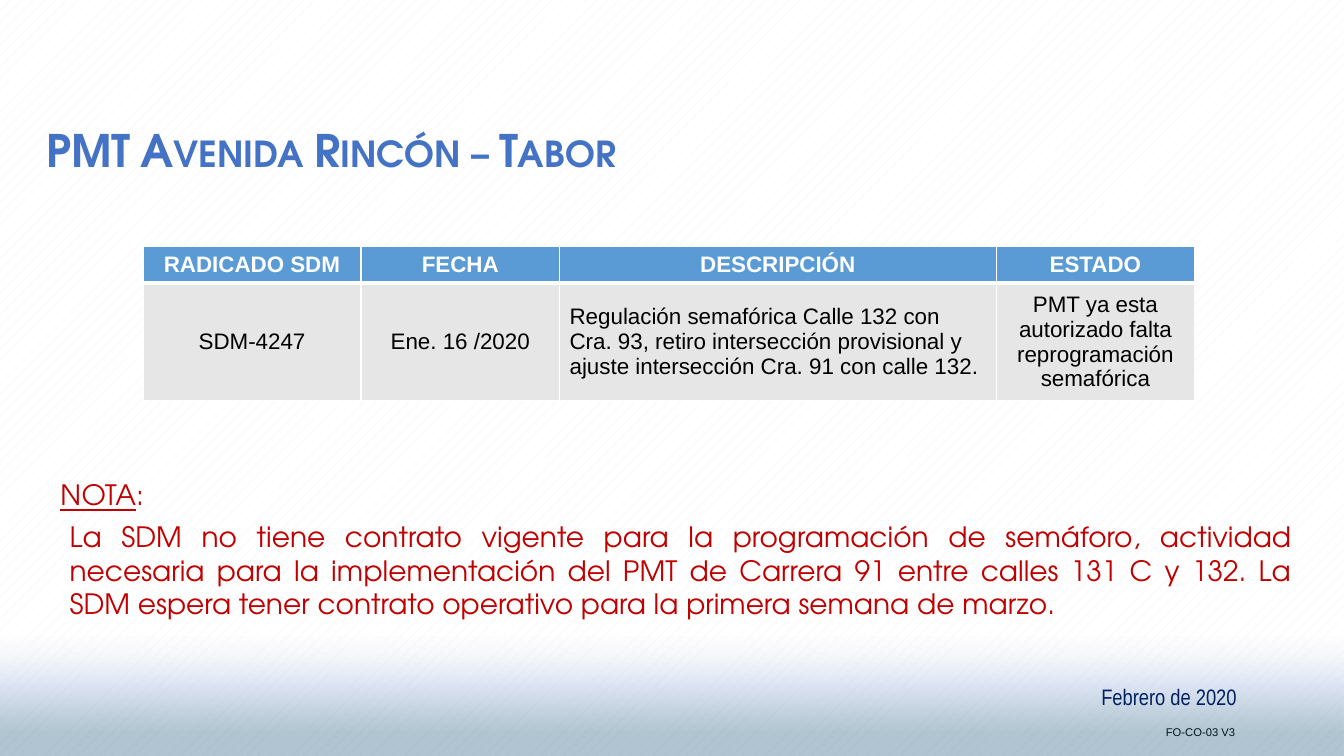
from lxml import etree
from pptx import Presentation
from pptx import util as u
from pptx.dml.color import RGBColor
from pptx.enum import dml, shapes, text
from pptx.oxml.ns import qn

ALIGN = text.PP_ALIGN
MID = text.MSO_ANCHOR.MIDDLE
FACE = "TeX Gyre Adventor"
HEADS = ["RADICADO SDM", "FECHA", "DESCRIPCIÓN", "ESTADO"]
ROW = [
    "SDM-4247",
    "Ene. 16 /2020",
    "Regulación semafórica Calle 132 con Cra. 93, retiro intersección "
    "provisional y ajuste intersección Cra. 91 con calle 132.",
    "PMT ya esta autorizado falta reprogramación semafórica",
]
NOTE = ("La SDM no tiene contrato vigente para la programación de semáforo, "
        "actividad necesaria para la implementación del PMT de Carrera 91 "
        "entre calles 131 C y 132. La SDM espera tener contrato operativo "
        "para la primera semana de marzo.")


def color(code):
    """Turn a hex string into a colour."""
    return RGBColor.from_string(code)


def place(*box):
    """Turn left, top, width and height into lengths."""
    return [u.Inches(n) for n in box]


def node(parent, tag, **attrs):
    """Append a drawing element to its parent."""
    return etree.SubElement(parent, qn("a:" + tag), attrs)


def style(run, size, code, face, bold=False):
    """Format the font of a run."""
    font = run.font
    font.size, font.name, font.bold = u.Pt(size), face, bold
    font.color.rgb = color(code)


def label(slide, box, words, size, code, face, align, bold=False, after=0):
    """Add a wrapped text box with one line of text."""
    frame = slide.shapes.add_textbox(*place(*box)).text_frame
    frame.word_wrap = True
    frame.auto_size = text.MSO_AUTO_SIZE.SHAPE_TO_FIT_TEXT
    frame.text = words
    para = frame.paragraphs[0]
    para.alignment, para.space_after = align, u.Pt(after)
    style(para.runs[0], size, code, face, bold)
    return frame


def band(slide, box, stops):
    """Add a rectangle with a see-through vertical gradient."""
    rect = slide.shapes.add_shape(shapes.MSO_SHAPE.RECTANGLE, *place(*box))
    rect.shadow.inherit = False
    rect.line.fill.background()
    rect.fill.gradient()
    grad = rect.fill._xPr.find(qn("a:gradFill"))
    for child in list(grad):
        grad.remove(child)
    items = node(grad, "gsLst")
    for pos, code, alpha in stops:
        stop = node(items, "gs", pos=str(pos * 1000))
        node(node(stop, "srgbClr", val=code), "alpha", val=str(alpha * 1000))
    node(grad, "lin", ang="5400000", scaled="0")


def edge(cell, top, bottom):
    """Give a cell white borders."""
    props = cell._tc.get_or_add_tcPr()
    for side, width in zip("LRTB", (1, 1, top, bottom)):
        line = node(props, "ln" + side, w=str(u.Pt(width)))
        node(node(line, "solidFill"), "srgbClr", val="FFFFFF")


def grid(slide, box, widths, heights):
    """Add the table of traffic plans."""
    table = slide.shapes.add_table(2, 4, *place(*box)).table
    for col, width in zip(table.columns, widths):
        col.width = u.Inches(width)
    for row, height in zip(table.rows, heights):
        row.height = u.Inches(height)
    looks = [(HEADS, "5B9BD5", "FFFFFF", True, 1, 3),
             (ROW, "E7E6E6", "000000", False, 3, 1)]
    for i, (words, back, ink, bold, top, bottom) in enumerate(looks):
        for j, word in enumerate(words):
            cell = table.cell(i, j)
            edge(cell, top, bottom)
            cell.fill.solid()
            cell.fill.fore_color.rgb = color(back)
            cell.vertical_anchor = MID
            cell.text = word
            para = cell.text_frame.paragraphs[0]
            left = word == ROW[2]
            para.alignment = ALIGN.LEFT if left else ALIGN.CENTER
            style(para.runs[0], 16, ink, "Arial", bold)


def note(slide, box):
    """Add the red note with its underlined heading."""
    frame = label(slide, box, "NOTA", 20, "C00000", FACE, ALIGN.JUSTIFY,
                  after=6)
    frame.vertical_anchor = MID
    frame.margin_left = u.Inches(0.24)
    frame.margin_top = frame.margin_bottom = u.Inches(0.16)
    head = frame.paragraphs[0]
    head.runs[0].font.underline = True
    colon = head.add_run()
    colon.text = ":"
    body = frame.add_paragraph()
    body.text = NOTE
    body.alignment = ALIGN.JUSTIFY
    body._p.get_or_add_pPr().set("marL", str(u.Inches(0.09)))
    for run in (colon, body.runs[0]):
        style(run, 20, "C00000", FACE)


def main():
    """Build and save the slide."""
    deck = Presentation()
    deck.slide_width, deck.slide_height = u.Inches(13.33), u.Inches(7.5)
    slide = deck.slides.add_slide(deck.slide_layouts[6])
    back = slide.background.fill
    back.patterned()
    back.pattern = dml.MSO_PATTERN.PERCENT_10
    back.fore_color.rgb = color("F2F2F2")
    back.back_color.rgb = color("FFFFFF")

    label(slide, (11.16, 7.15, 1.19, 0.24), "FO-CO-03 V3", 8, "000000",
          "Arial", ALIGN.RIGHT)
    band(slide, (0, 6.32, 13.33, 1.18),
         [(0, "F2F2F2", 10), (40, "8FAADC", 30), (80, "004268", 30)])
    title = label(slide, (0.36, 1.17, 12.55, 0.64),
                  "PMT Avenida Rincón – Tabor", 32, "4472C4", FACE,
                  ALIGN.LEFT, True, 12)
    title.paragraphs[0].runs[0].font._element.set("cap", "small")
    label(slide, (10.78, 6.73, 1.63, 0.37), "Febrero de 2020", 16, "002060",
          "Arial Narrow", ALIGN.CENTER, after=10)
    note(slide, (0.36, 4.57, 12.55, 1.75))
    grid(slide, (1.42, 2.44, 10.43, 1.53), (2.16, 1.97, 4.33, 1.97),
         (0.36, 1.17))
    deck.save("out.pptx")


if __name__ == "__main__":
    main()
